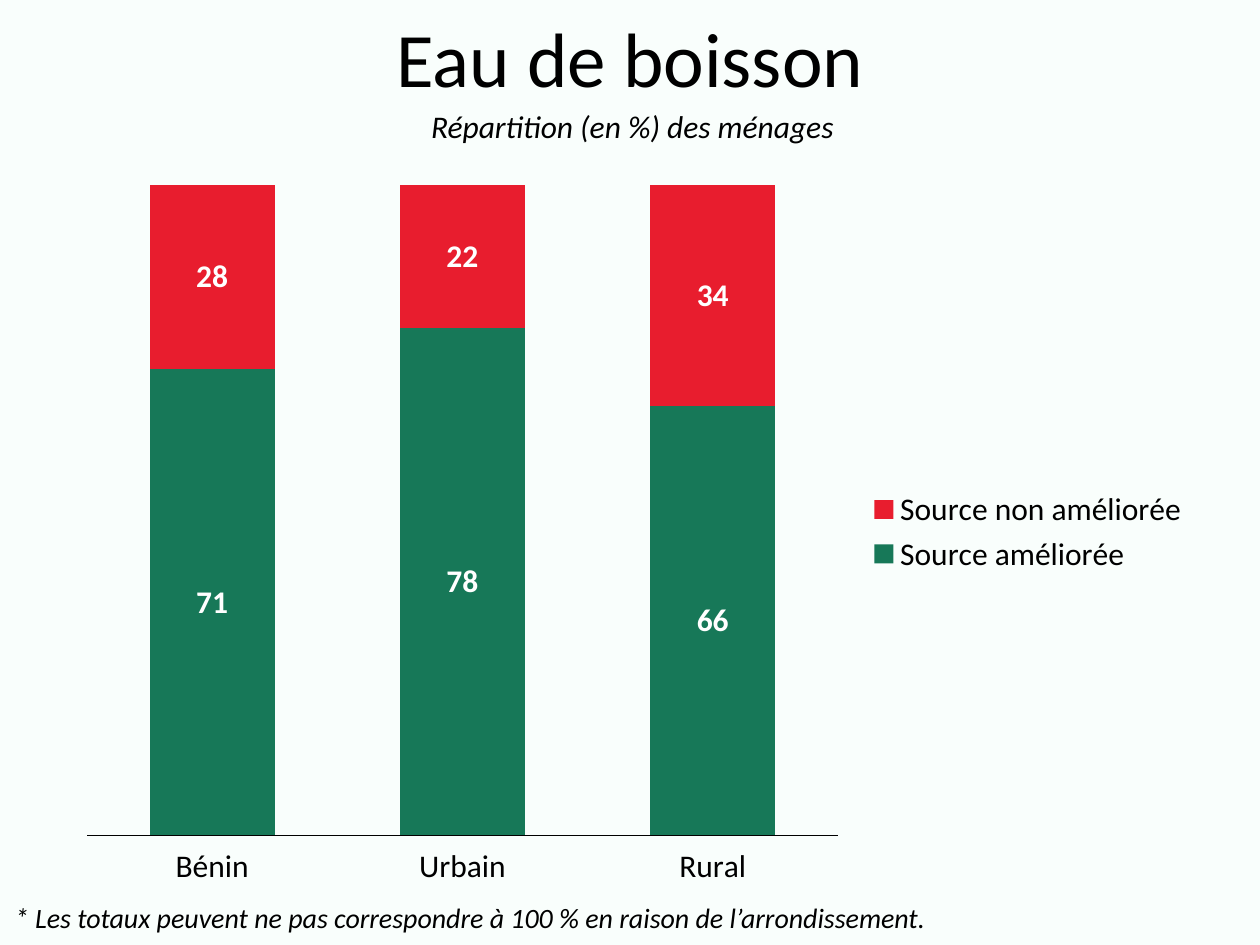
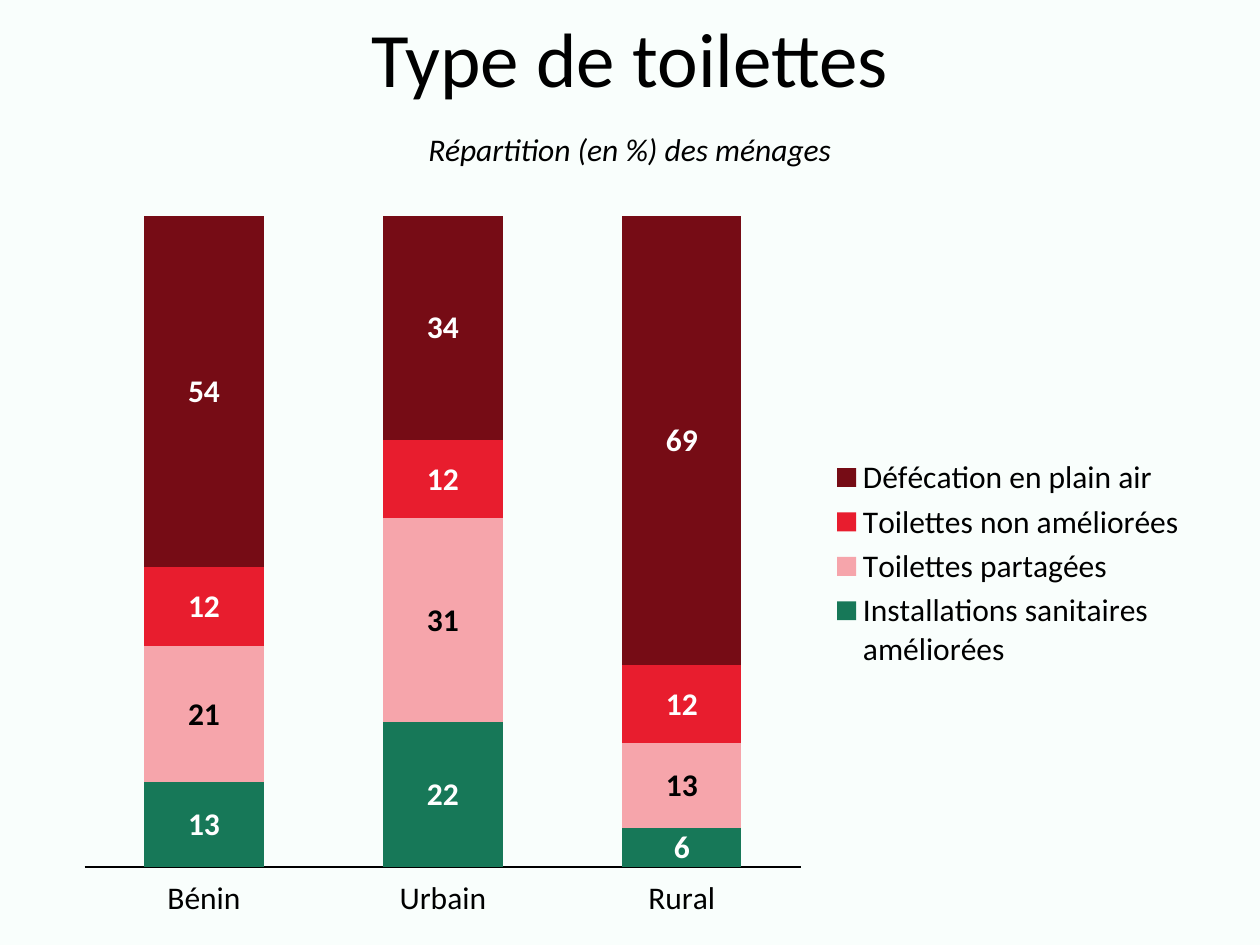
from dataclasses import dataclass

from lxml import etree
from pptx import Presentation
from pptx.chart.data import CategoryChartData
from pptx.dml.color import RGBColor
from pptx.enum.chart import XL_CHART_TYPE, XL_LABEL_POSITION, XL_LEGEND_POSITION, XL_TICK_LABEL_POSITION, XL_TICK_MARK
from pptx.enum.text import MSO_ANCHOR, PP_ALIGN
from pptx.oxml.ns import qn
from pptx.util import Inches, Pt

STACKED_100 = XL_CHART_TYPE.COLUMN_STACKED_100
LABEL_CENTER = XL_LABEL_POSITION.CENTER
LEGEND_RIGHT = XL_LEGEND_POSITION.RIGHT
TICK_NONE = XL_TICK_MARK.NONE
LABELS_LOW = XL_TICK_LABEL_POSITION.LOW
MIDDLE, TOP = MSO_ANCHOR.MIDDLE, MSO_ANCHOR.TOP
CENTER, LEFT = PP_ALIGN.CENTER, PP_ALIGN.LEFT


@dataclass(frozen=True)
class Theme:
    font: str = "Calibri"
    background: str = "F9FEFC"
    black: str = "000000"
    white: str = "FFFFFF"
    green: str = "177858"
    pink: str = "F6A5AB"
    red: str = "E81D2E"
    dark_red: str = "760C15"
    title_size: int = 44
    body_size: int = 18
    note_size: int = 16


THEME = Theme()
AREAS = ("Bénin", "Urbain", "Rural")
SUBTITLE = "Répartition (en %) des ménages"
ROUNDING_NOTE = "* Les totaux peuvent ne pas correspondre à 100 % en raison de l’arrondissement."

WATER_SERIES = (
    ("Source améliorée", (71, 78, 66), THEME.green, THEME.white),
    ("Source non améliorée", (28, 22, 34), THEME.red, THEME.white),
)
TOILET_SERIES = (
    ("Installations sanitaires améliorées", (13, 22, 6), THEME.green, THEME.white),
    ("Toilettes partagées", (21, 31, 13), THEME.pink, THEME.black),
    ("Toilettes non améliorées", (12, 12, 12), THEME.red, THEME.white),
    ("Défécation en plain air", (54, 34, 69), THEME.dark_red, THEME.white),
)


def style_font(font, size, color=THEME.black, bold=False, italic=False):
    font.name = THEME.font
    font.size = Pt(size)
    font.bold = bold
    font.italic = italic
    font.color.rgb = RGBColor.from_string(color)


def add_text(s, text, left, top, width, height, size, align=CENTER, anchor=TOP, italic=True):
    box = s.shapes.add_textbox(Inches(left), Inches(top), Inches(width), Inches(height))
    tf = box.text_frame
    tf.word_wrap = True
    tf.vertical_anchor = anchor
    tf.text = text
    p = tf.paragraphs[0]
    p.alignment = align
    style_font(p.runs[0].font, size, italic=italic)
    return p


def add_title(s, text):
    p = add_text(s, text, 0, 0, 10, 1, THEME.title_size, anchor=MIDDLE, italic=False)
    p.line_spacing = 0.9


def place_plot(chart, x, y, w, h):
    area = chart.plots[0]._element.getparent()
    layout = area.find(qn("c:layout"))
    if layout is None:
        layout = etree.Element(qn("c:layout"))
        area.insert(0, layout)
    manual = etree.SubElement(layout, qn("c:manualLayout"))
    settings = (("layoutTarget", "inner"), ("xMode", "edge"), ("yMode", "edge"),
                ("x", x), ("y", y), ("w", w), ("h", h))
    for name, value in settings:
        etree.SubElement(manual, qn(f"c:{name}")).set("val", str(value))


def style_axes(chart):
    axis = chart.category_axis
    axis.major_tick_mark = axis.minor_tick_mark = TICK_NONE
    axis.tick_label_position = LABELS_LOW
    axis.format.line.width = Pt(0.75)
    axis.format.line.color.rgb = RGBColor.from_string(THEME.black)
    style_font(axis.tick_labels.font, THEME.body_size)
    chart.value_axis.has_major_gridlines = False
    chart.value_axis.visible = False


def style_series(series, fill, label_color):
    series.format.fill.solid()
    series.format.fill.fore_color.rgb = RGBColor.from_string(fill)
    labels = series.data_labels
    labels.show_value = True
    labels.position = LABEL_CENTER
    labels.number_format = "0"
    labels.number_format_is_linked = False
    style_font(labels.font, THEME.body_size, label_color, bold=True)


def add_stacked_chart(s, rows, left, top, plot_width):
    data = CategoryChartData(number_format="0")
    data.categories = AREAS
    for name, values, _, _ in rows:
        data.add_series(name, values)
    frame = s.shapes.add_chart(STACKED_100, Inches(left), Inches(top), Inches(9.03), Inches(5.74), data)
    chart = frame.chart
    chart.has_title = False
    style_font(chart.font, THEME.body_size)
    chart.has_legend = True
    chart.legend.position = LEGEND_RIGHT
    chart.legend.include_in_layout = False
    style_font(chart.legend.font, THEME.body_size)
    plot = chart.plots[0]
    plot.gap_width = 100
    plot.overlap = 100
    plot.vary_by_categories = False
    style_axes(chart)
    for series, (_, _, fill, label_color) in zip(plot.series, rows):
        style_series(series, fill, label_color)
    place_plot(chart, 0.02, 0.02, plot_width, 0.9)


def add_household_slide(prs, title, rows, chart_at, plot_width, subtitle_at):
    s = prs.slides.add_slide(prs.slide_layouts[6])
    s.background.fill.solid()
    s.background.fill.fore_color.rgb = RGBColor.from_string(THEME.background)
    add_title(s, title)
    add_stacked_chart(s, rows, *chart_at, plot_width)
    add_text(s, SUBTITLE, *subtitle_at, 10, 0.4, THEME.body_size)
    return s


def main():
    prs = Presentation()
    prs.slide_width, prs.slide_height = Inches(10), Inches(7.5)
    water = add_household_slide(prs, "Eau de boisson", WATER_SERIES, (0.51, 1.35), 0.66, (0.02, 0.8))
    add_text(water, ROUNDING_NOTE, 0.02, 7.1, 9.85, 0.37, THEME.note_size, align=LEFT)
    add_household_slide(prs, "Type de toilettes", TOILET_SERIES, (0.49, 1.6), 0.63, (0, 0.98))
    prs.save("out.pptx")


if __name__ == "__main__":
    main()
